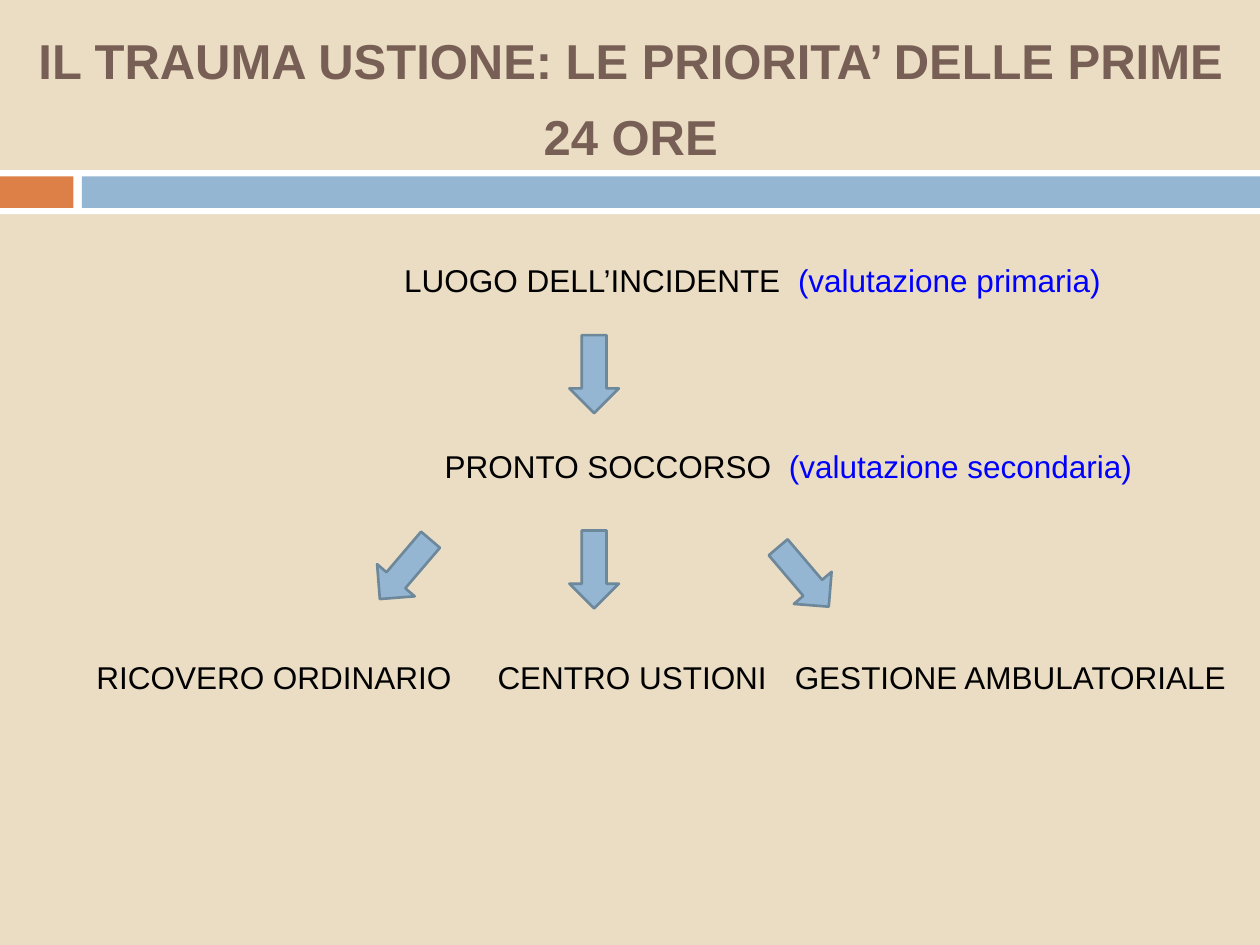
from pptx import Presentation
from pptx import util as u
from pptx.dml import color
from pptx.enum import shapes, text

Pt = u.Pt
BLUE, BLACK = "94B6D2", "000000"


def paint(target, value):
    """Give a fill a solid colour, or a font its text colour."""
    if hasattr(target, "solid"):
        target.solid()
        target.fore_color.rgb = color.RGBColor.from_string(value)
    else:
        target.color.rgb = color.RGBColor.from_string(value)


def add_text(frame_format, place, spans, size, bold=False):
    box = page.shapes.add_textbox(*map(Pt, place))
    for name, value in frame_format.items():
        setattr(box.text_frame, name, value)
    para = box.text_frame.paragraphs[0]
    for words, value in spans:
        span = para.add_run()
        span.text = words
        for name, setting in {"name": "Arial", "size": Pt(size), "bold": bold}.items():
            setattr(span.font, name, setting)
        paint(span.font, value)
    return para


deck = Presentation()
deck.slide_width, deck.slide_height = Pt(720), Pt(540)
page = deck.slides.add_slide(deck.slide_layouts[6])
paint(page.background.fill, "EBDDC3")

# Band under the title
for left, top, width, height, value in [
    (0, 97.2, 720, 25.2, "FFFFFF"),
    (0, 100.8, 42, 18, "DD8047"),
    (46.8, 100.8, 673.2, 18, BLUE),
]:
    bar = page.shapes.add_shape(
        shapes.MSO_SHAPE.RECTANGLE, Pt(left), Pt(top), Pt(width), Pt(height))
    bar.shadow.inherit = False
    paint(bar.fill, value)
    bar.line.fill.background()

# Title
title = add_text(
    {"word_wrap": True, "vertical_anchor": text.MSO_ANCHOR.MIDDLE},
    (14.4, 12, 692, 78),
    [("IL TRAUMA USTIONE: LE PRIORITA’ DELLE PRIME 24 ORE", "775F55")],
    28, bold=True)
title.alignment = text.PP_ALIGN.CENTER
title.line_spacing = 1.3

# Stages of care
stage_format = {"word_wrap": False, "auto_size": text.MSO_AUTO_SIZE.SHAPE_TO_FIT_TEXT}
for left, top, width, stage, note in [
    (223.9, 145.4, 416, "LUOGO DELL’INCIDENTE  ", "(valutazione primaria)"),
    (247, 252, 411, "PRONTO SOCCORSO  ", "(valutazione secondaria)"),
    (48, 372.2, 220, "RICOVERO ORDINARIO", ""),
    (277.2, 372.2, 170, "CENTRO USTIONI", ""),
    (447.1, 372.2, 263.5, "GESTIONE AMBULATORIALE", ""),
]:
    spans = [(stage, BLACK)] + ([(note, "0000FF")] if note else [])
    add_text(stage_format, (left, top, width, 29), spans, 18)

# Arrows between the stages
for left, top, angle in [
    (325.4, 191.5, 0),
    (325.4, 303.1, 0),
    (217.4, 303.1, 40.5),
    (445, 307.4, 319.6),
]:
    arrow = page.shapes.add_shape(
        shapes.MSO_SHAPE.DOWN_ARROW, Pt(left), Pt(top), Pt(28.3), Pt(44.6))
    arrow.rotation = angle
    arrow.shadow.inherit = False
    paint(arrow.fill, BLUE)
    paint(arrow.line.fill, "6D879B")
    arrow.line.width = Pt(1.5)

deck.save("out.pptx")
